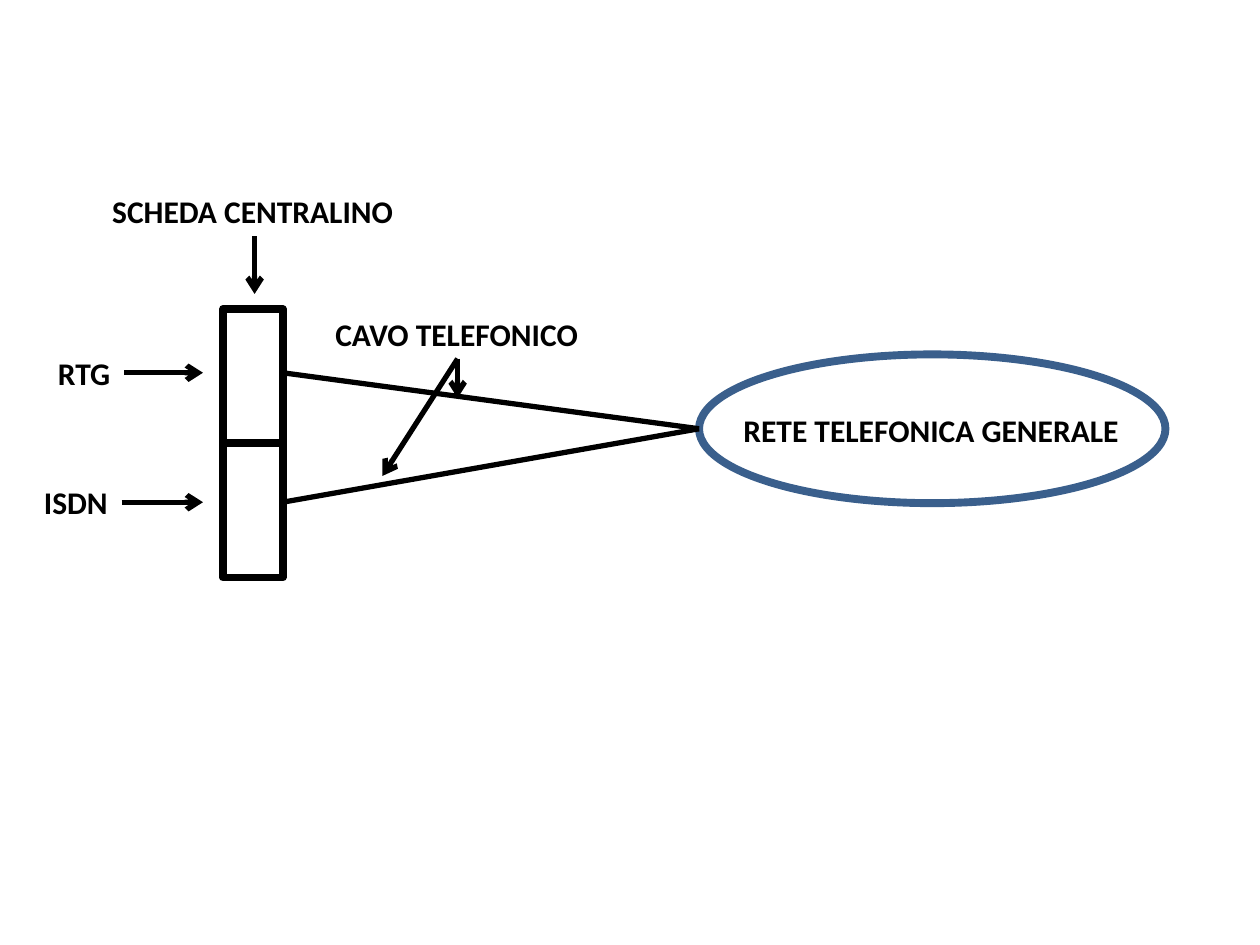
from lxml import etree
from pptx import Presentation
from pptx.dml.color import RGBColor
from pptx.enum import shapes, text
from pptx.oxml import ns
from pptx.util import Pt

BLACK, BLUE = "000000", "3A5F8C"
LABEL_HEIGHT = 29


def color(value):
    return RGBColor.from_string(value)


def add_outline(page, kind, box, line_color):
    shape = page.shapes.add_shape(kind, *map(Pt, box))
    shape.shadow.inherit = False
    shape.fill.background()
    shape.line.color.rgb = color(line_color)
    shape.line.width = Pt(4.5)


def add_line(page, start, end, width=3, arrow=False):
    line = page.shapes.add_connector(
        shapes.MSO_CONNECTOR.STRAIGHT, *map(Pt, (*start, *end)))
    line.line.color.rgb = color(BLACK)
    line.line.width = Pt(width)
    if arrow:
        outline = line.line._get_or_add_ln()
        etree.SubElement(outline, ns.qn("a:tailEnd"), type="arrow")
    etree.SubElement(line._element.spPr, ns.qn("a:effectLst"))


def add_label(page, left, top, width, wording):
    box = page.shapes.add_textbox(*map(Pt, (left, top, width, LABEL_HEIGHT)))
    box.text_frame.word_wrap = False
    box.text_frame.auto_size = text.MSO_AUTO_SIZE.SHAPE_TO_FIT_TEXT
    span = box.text_frame.paragraphs[0].add_run()
    span.text = wording
    span.font.color.rgb = color(BLACK)
    for name, value in {"name": "Calibri", "size": Pt(18), "bold": True}.items():
        setattr(span.font, name, value)


def add_switchboard(page, box, ports):
    """Draw the two-slot card with its caption and one labelled arrow per port."""
    left, top, width, height = box
    middle = top + height / 2
    add_outline(page, shapes.MSO_SHAPE.RECTANGLE, box, BLACK)
    add_line(page, (left, middle), (left + width, middle), 4.5)

    add_label(page, left - 70.5, top - 70.5, 176.5, "SCHEDA CENTRALINO")
    center = left + width / 2 + 1
    add_line(page, (center, top - 41.5), (center, top - 8.5), arrow=True)

    for wording, y, label_left, label_width in ports:
        add_label(page, label_left, y - LABEL_HEIGHT / 2, label_width, wording)
        add_line(page, (label_left + label_width, y), (left - 11.5, y), arrow=True)


def add_network(page, box):
    left, top, width, height = box
    add_outline(page, shapes.MSO_SHAPE.OVAL, box, BLUE)
    label_width = 231
    add_label(page, left + (width - label_width) / 2 + 0.5,
              top + (height - LABEL_HEIGHT) / 2 + 1,
              label_width, "RETE TELEFONICA GENERALE")


def add_cables(page, starts, end):
    """Join each port to the network and point the cable caption at both lines."""
    for start in starts:
        add_line(page, start, end)
    left, top = starts[0]
    add_label(page, left + 23, top - 36.5, 154, "CAVO TELEFONICO")
    tip = (left + 100, top - 8)
    for target in ((tip[0], top + 14.5), (left + 57, top + 59)):
        add_line(page, tip, target, arrow=True)


def main():
    deck = Presentation()
    deck.slide_width, deck.slide_height = Pt(720), Pt(540)
    page = deck.slides.add_slide(deck.slide_layouts[6])

    card = (127.5, 176.5, 34, 153.5)
    network = (399.5, 202.5, 266.5, 85)
    ports = (("RTG", 213, 26, 45), ("ISDN", 287, 18, 51.5))
    card_right = card[0] + card[2]

    add_switchboard(page, card, ports)
    add_network(page, network)
    add_cables(page, [(card_right, port[1]) for port in ports],
               (network[0], network[1] + network[3] / 2))
    deck.save("out.pptx")


if __name__ == "__main__":
    main()
